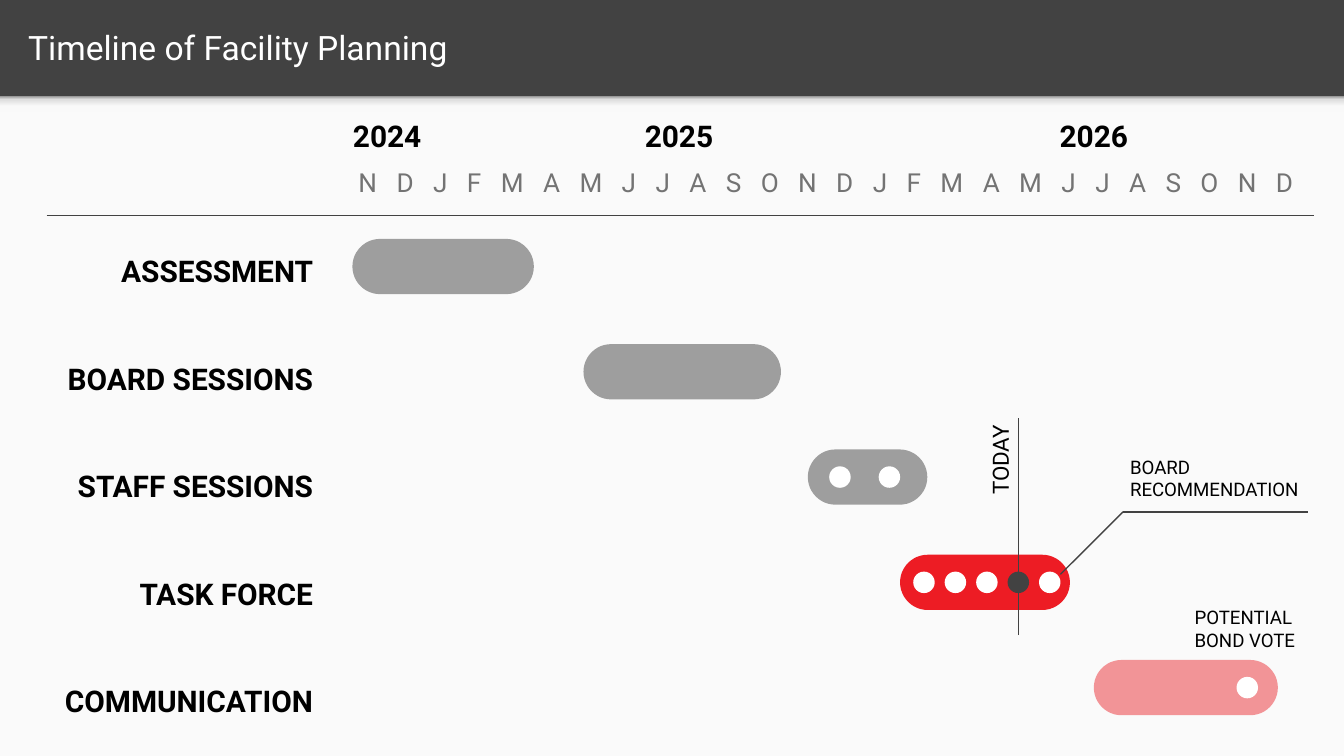
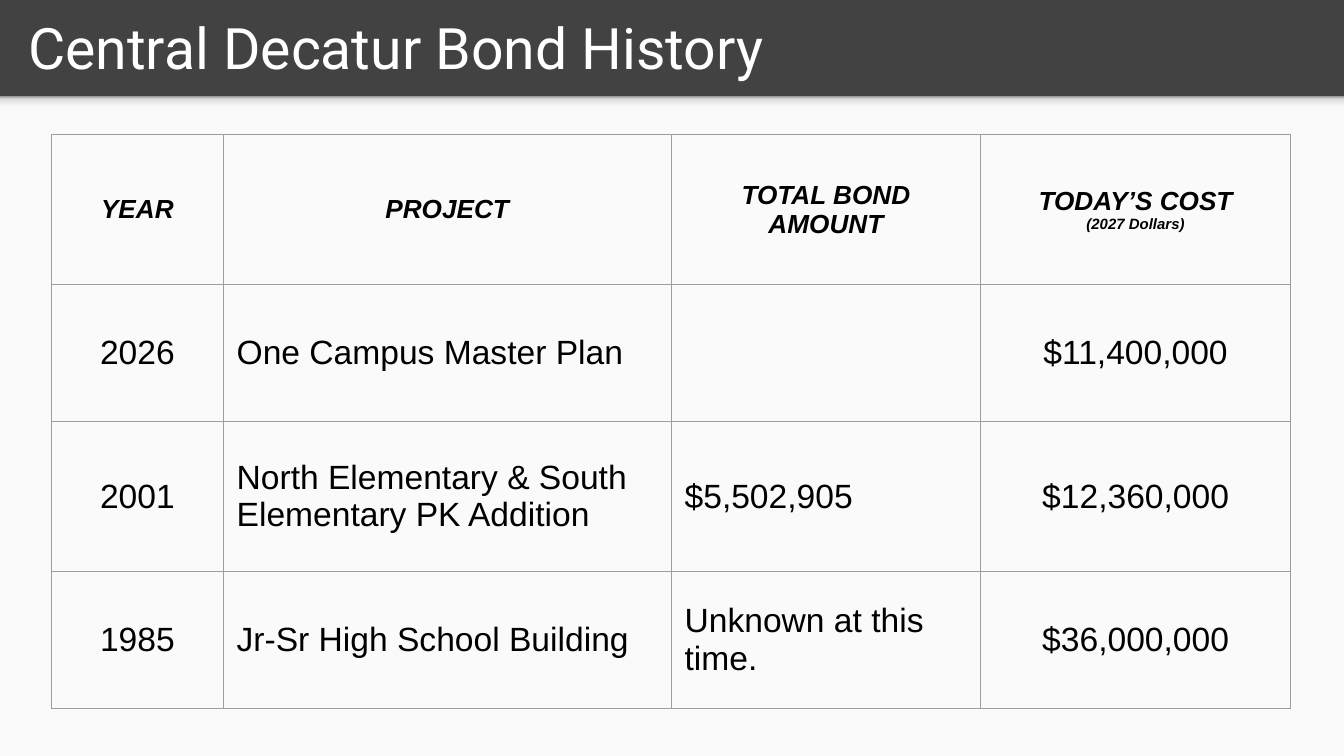
import itertools

import lxml.etree
import pptx
import pptx.dml.color
import pptx.enum.shapes
import pptx.enum.text
import pptx.oxml
import pptx.oxml.ns
import pptx.util

Pt = pptx.util.Pt
SHAPES = pptx.enum.shapes.MSO_SHAPE
ALIGN = pptx.enum.text.PP_ALIGN
ANCHOR = pptx.enum.text.MSO_ANCHOR
qn = pptx.oxml.ns.qn

COLORS = {
    "band": "424242", "page": "FAFAFA", "white": "FFFFFF", "black": "000000",
    "month": "737373", "done": "9E9E9E", "current": "ED1C24", "next": "F29497",
}
SHADOW_STOPS = [(0, "F9F9F9"), (36, "F9F9F9"), (80, "DEDEDE"), (100, "999999")]
SLIDE_WIDTH, SLIDE_HEIGHT, BAND_HEIGHT = 720, 405, 51.6
INSET = 7.2

# Advance widths in em, used to set the month letters three spaces apart
LETTER_WIDTHS = {"N": .713, "D": .656, "J": .552, "F": .553,
                 "M": .873, "A": .652, "S": .593, "O": .688}
MONTH_GAP = .743
MONTHS = "NDJFMAMJJASONDJFMAMJJASOND"

# Phase, bar left, bar width, colour, centres of the meeting dots from the bar's left
PHASES = [
    ("ASSESSMENT", 188.8, 97.2, "done", []),
    ("BOARD SESSIONS", 312.6, 105.8, "done", []),
    ("STAFF SESSIONS", 432.8, 64, "done", [17.2, 43.7]),
    ("TASK FORCE", 482.2, 91, "current", [12.8 + 16.85 * i for i in range(5)]),
    ("COMMUNICATION", 586, 98.6, "next", [82.2]),
]
TODAY_DOT = ("TASK FORCE", 3)
BAR_PITCH, BAR_HEIGHT, DOT_SIZE = 56.4, 29.6, 11.5

BOND_COLUMNS = [92, 240, 165.8, 166]
BOND_ROWS = [80.4, 73.2, 80.4, 73.2]
BOND_HISTORY = [
    ["YEAR", "PROJECT", "TOTAL BOND AMOUNT", "TODAY’S COST\n(2027 Dollars)"],
    ["2026", "One Campus Master Plan", "", "$11,400,000"],
    ["2001", "North Elementary & South Elementary PK Addition", "$5,502,905", "$12,360,000"],
    ["1985", "Jr-Sr High School Building", "Unknown at this time.", "$36,000,000"],
]


def rgb(name):
    return pptx.dml.color.RGBColor.from_string(COLORS[name])


def points(*values):
    return [Pt(value) for value in values]


def style(paragraph, size, color="black", bold=False, italic=False,
          font="Roboto", align=ALIGN.LEFT):
    paragraph.alignment = align
    paragraph.font.name = font
    paragraph.font.size = Pt(size)
    paragraph.font.bold = bold
    paragraph.font.italic = italic
    paragraph.font.color.rgb = rgb(color)


def set_frame(frame, anchor=ANCHOR.TOP):
    frame.word_wrap = True
    frame.auto_size = pptx.enum.text.MSO_AUTO_SIZE.NONE
    frame.vertical_anchor = anchor
    frame.margin_left = frame.margin_right = Pt(INSET)
    frame.margin_top = frame.margin_bottom = Pt(INSET)


def add_text(slide, box, text, size, anchor=ANCHOR.TOP, **look):
    shape = slide.shapes.add_textbox(*points(*box))
    set_frame(shape.text_frame, anchor)
    shape.text_frame.text = text
    for paragraph in shape.text_frame.paragraphs:
        style(paragraph, size, **look)
    return shape


def add_filled(slide, kind, box, color):
    shape = slide.shapes.add_shape(kind, *points(*box))
    shape.shadow.inherit = False
    shape.fill.solid()
    shape.fill.fore_color.rgb = rgb(color)
    shape.line.fill.background()
    return shape


def add_line(slide, start, end):
    line = slide.shapes.add_connector(
        pptx.enum.shapes.MSO_CONNECTOR.STRAIGHT, *points(*start, *end))
    line.line.color.rgb = rgb("band")
    line.line.width = Pt(.75)
    lxml.etree.SubElement(line._element.spPr, qn("a:effectLst"))


def build_layout(presentation):
    """Give the title-only layout its dark band, page and page shadow."""
    layout = presentation.slide_layouts[5]
    layout.background.fill.solid()
    layout.background.fill.fore_color.rgb = rgb("band")
    return layout


def add_page(slide, layout):
    """Draw the page below the band and hand it over to the layout."""
    page = add_filled(slide, SHAPES.RECTANGLE,
                      (0, BAND_HEIGHT, SLIDE_WIDTH, SLIDE_HEIGHT - BAND_HEIGHT), "page")
    shade = add_filled(slide, SHAPES.RECTANGLE, (0, BAND_HEIGHT, SLIDE_WIDTH, 8.6), "page")
    stops = "".join(f'<a:gs pos="{position * 1000}"><a:srgbClr val="{color}"/></a:gs>'
                    for position, color in SHADOW_STOPS)
    gradient = pptx.oxml.parse_xml(
        f'<a:gradFill {pptx.oxml.ns.nsdecls("a")}><a:gsLst>{stops}</a:gsLst>'
        '<a:lin ang="16200000" scaled="0"/></a:gradFill>')
    properties = shade._element.spPr
    properties.replace(properties.find(qn("a:solidFill")), gradient)
    for shape in (page, shade):
        layout.shapes.element.append(shape._element)


def add_title(slide, text, size):
    title = slide.shapes.title
    title.left, title.top, title.width, title.height = points(7.9, 1.4, 695, 47.5)
    set_frame(title.text_frame, ANCHOR.MIDDLE)
    title.text_frame.text = text
    style(title.text_frame.paragraphs[0], size, "white")


def add_calendar(slide, left, top):
    """Years, month letters and the rule under them."""
    for year, offset in (("2024", 0), ("2025", 156.4), ("2026", 378.6)):
        add_text(slide, (left + offset, top, 66, 33), year, 16, bold=True)
    size = 14
    months = add_text(slide, (left + 3, top + 26, 518, 33), "\t".join(MONTHS), size,
                      color="month")
    properties = months.text_frame.paragraphs[0]._p.get_or_add_pPr()
    tabs = lxml.etree.Element(qn("a:tabLst"))
    properties.insert(0, tabs)
    advances = [(LETTER_WIDTHS[letter] + MONTH_GAP) * size for letter in MONTHS[:-1]]
    for position in itertools.accumulate(advances):
        lxml.etree.SubElement(tabs, qn("a:tab"), pos=str(int(Pt(position))), algn="l")
    add_line(slide, (left - 157, top + 59.5), (left + 522, top + 59.5))


def add_phase_labels(slide, box):
    names = "\n".join(phase[0] for phase in PHASES)
    labels = add_text(slide, box, names, 16, bold=True, align=ALIGN.RIGHT)
    for paragraph in labels.text_frame.paragraphs[1:]:
        paragraph.space_before = Pt(38.4)


def add_phase_bars(slide, top):
    for row, (name, left, width, color, dots) in enumerate(PHASES):
        bar_top = top + row * BAR_PITCH
        bar = add_filled(slide, SHAPES.ROUNDED_RECTANGLE,
                         (left, bar_top, width, BAR_HEIGHT), color)
        bar.adjustments[0] = .5
        dot_top = bar_top + (BAR_HEIGHT - DOT_SIZE) / 2
        for index, center in enumerate(dots):
            dot_color = "band" if (name, index) == TODAY_DOT else "white"
            add_filled(slide, SHAPES.OVAL,
                       (left + center - DOT_SIZE / 2, dot_top, DOT_SIZE, DOT_SIZE), dot_color)


def add_today_marker(slide, x, top):
    add_line(slide, (x, top + 116.3), (x, top))
    today = add_text(slide, (x - 48.2, top - 8.6, 80.6, 33), "TODAY", 12)
    today.rotation = 270


def add_callouts(slide, left, top):
    """Board recommendation with its leader, and the bond vote."""
    elbow = (left + 3.4, top + 33)
    add_line(slide, (left - 30.2, top + 66.5), elbow)
    add_line(slide, elbow, (left + 102.4, top + 33))
    add_text(slide, (left, top, 113.8, 29.5), "BOARD RECOMMENDATION", 10, ANCHOR.MIDDLE)
    add_text(slide, (left + 34.6, top + 80.8, 85.7, 29.5), "POTENTIAL BOND VOTE", 10,
             ANCHOR.MIDDLE)


def build_timeline(slide):
    add_title(slide, "Timeline of Facility Planning", 18)
    add_calendar(slide, 182, 56.1)
    add_phase_labels(slide, (26.6, 128.2, 148.3, 270.7))
    add_phase_bars(slide, 128)
    add_today_marker(slide, 545.7, 224)
    add_callouts(slide, 598.3, 241.2)


def format_cell(cell, text, is_header, align):
    for side in ("L", "R", "T", "B"):
        cell._tc.get_or_add_tcPr().append(pptx.oxml.parse_xml(
            f'<a:ln{side} {pptx.oxml.ns.nsdecls("a")} w="{int(Pt(.75))}"><a:solidFill>'
            f'<a:srgbClr val="{COLORS["done"]}"/></a:solidFill></a:ln{side}>'))
    cell.fill.background()
    cell.vertical_anchor = ANCHOR.MIDDLE
    cell.margin_left = cell.margin_right = Pt(INSET)
    cell.margin_top = cell.margin_bottom = Pt(INSET)
    cell.text = text
    for index, paragraph in enumerate(cell.text_frame.paragraphs):
        size = 8 if index else 14 if is_header else 18
        style(paragraph, size, bold=is_header, italic=is_header, font="Arial", align=align)


def add_bond_table(slide, left, top):
    frame = slide.shapes.add_table(
        len(BOND_ROWS), len(BOND_COLUMNS),
        *points(left, top, sum(BOND_COLUMNS), sum(BOND_ROWS)))
    table = frame.table
    table.first_row = table.horz_banding = False
    for column, width in zip(table.columns, BOND_COLUMNS):
        column.width = Pt(width)
    for row, height in zip(table.rows, BOND_ROWS):
        row.height = Pt(height)
    for row, values in enumerate(BOND_HISTORY):
        for column, text in enumerate(values):
            centered = row == 0 or column in (0, 3)
            format_cell(table.cell(row, column), text, row == 0,
                        ALIGN.CENTER if centered else ALIGN.LEFT)


def build_bond_history(slide):
    add_title(slide, "Central Decatur Bond History", 30.6)
    add_bond_table(slide, 27.6, 72.2)


def main():
    presentation = pptx.Presentation()
    presentation.slide_width, presentation.slide_height = points(SLIDE_WIDTH, SLIDE_HEIGHT)
    layout = build_layout(presentation)
    slides = [presentation.slides.add_slide(layout) for _ in range(2)]
    add_page(slides[0], layout)
    build_timeline(slides[0])
    build_bond_history(slides[1])
    presentation.save("out.pptx")


if __name__ == "__main__":
    main()
